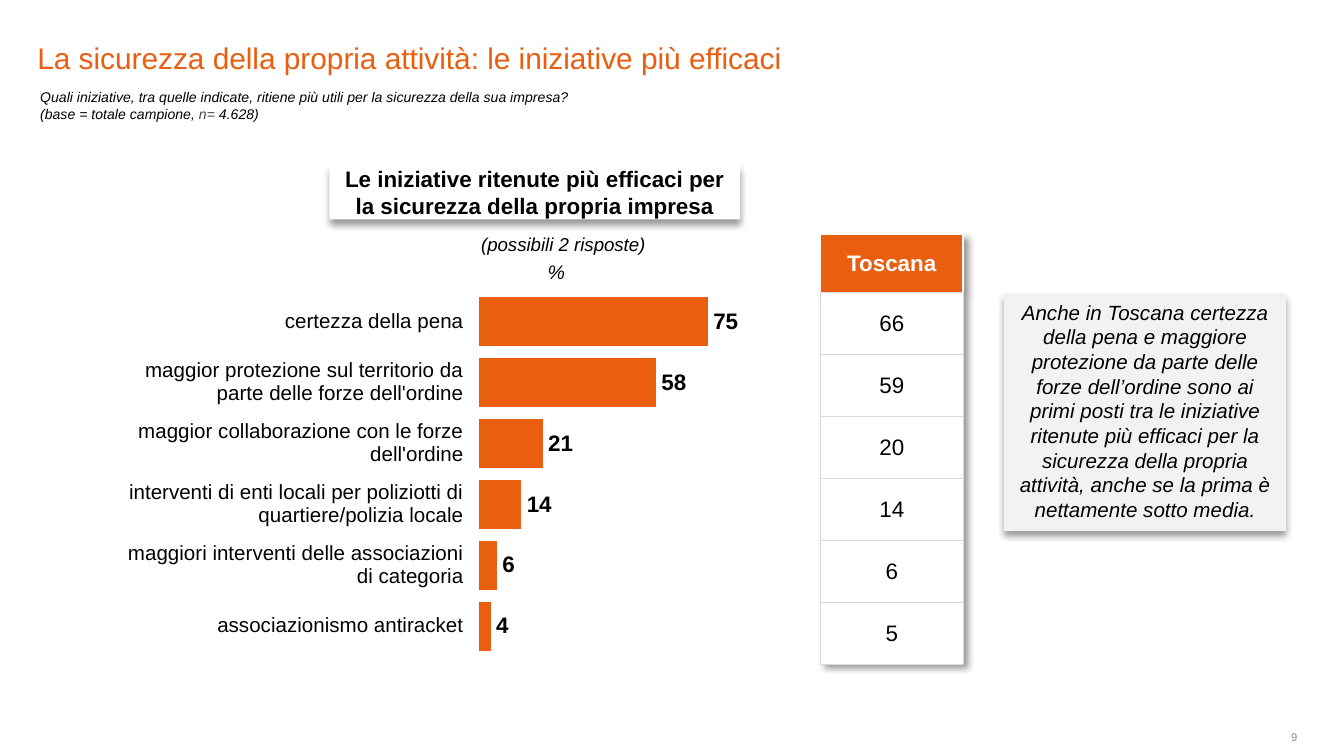
from lxml import etree
from pptx import Presentation
from pptx.chart.data import CategoryChartData
from pptx.dml.color import RGBColor
from pptx.enum.chart import XL_CHART_TYPE, XL_LABEL_POSITION
from pptx.enum.shapes import MSO_SHAPE
from pptx.enum.text import MSO_ANCHOR, MSO_AUTO_SIZE, PP_ALIGN
from pptx.oxml import parse_xml
from pptx.oxml.ns import nsdecls, qn
from pptx.util import Pt

HUES = {"orange": "E95E0F", "black": "000000", "white": "FFFFFF", "grey": "F2F2F2",
        "rule": "D9D9D9", "brown": "4A423F", "number": "928580"}
FONT = "Arial"
NO_STYLE = "{2D5ABB26-0587-4C30-8999-92F81FD0307C}"

TITLE = "La sicurezza della propria attività: le iniziative più efficaci"
QUERY = "Quali iniziative, tra quelle indicate, ritiene più utili per la sicurezza della sua impresa?"
BASE = [("(base = totale campione, ", "black"), ("n=", "brown"), (" 4.628)", "black")]
HEAD = "Le iniziative ritenute più efficaci per la sicurezza della propria impresa"
NOTE = ("Anche in Toscana certezza della pena e maggiore protezione da parte delle forze "
        "dell’ordine sono ai primi posti tra le iniziative ritenute più efficaci per la "
        "sicurezza della propria attività, anche se la prima è nettamente sotto media.")
REGION = "Toscana"
ROWS = [
    ("certezza della pena", 75, 66),
    ("maggior protezione sul territorio da parte delle forze dell'ordine", 58, 59),
    ("maggior collaborazione con le forze dell'ordine", 21, 20),
    ("interventi di enti locali per poliziotti di quartiere/polizia locale", 14, 14),
    ("maggiori interventi delle associazioni di categoria", 6, 6),
    ("associazionismo antiracket", 4, 5),
]
PLOT = {"x": 0.201, "y": 0.01, "w": 0.496, "h": 0.967}


def color(name):
    return RGBColor.from_string(HUES[name])


def style(font, size, hue="black", bold=False, italic=False):
    font.name, font.size = FONT, Pt(size)
    font.bold, font.italic = bold, italic
    font.color.rgb = color(hue)


def write(frame, text, size, hue="black", align=PP_ALIGN.CENTER, bold=False, italic=False):
    frame.text = text
    frame.word_wrap = True
    for para in frame.paragraphs:
        para.alignment = align
        for run in para.runs:
            style(run.font, size, hue, bold, italic)


def inset(item, left, top, right, low):
    item.margin_left, item.margin_top = Pt(left), Pt(top)
    item.margin_right, item.margin_bottom = Pt(right), Pt(low)


def label(box, text, size, anchor=MSO_ANCHOR.TOP, pad=True, **look):
    frame = slide.shapes.add_textbox(*map(Pt, box)).text_frame
    frame.vertical_anchor = anchor
    if not pad:
        inset(frame, 0, 0, 0, 0)
    write(frame, text, size, **look)
    return frame


def shade(angle):
    return parse_xml(
        f'<a:effectLst {nsdecls("a")}><a:outerShdw blurRad="{Pt(4)}" dist="{Pt(3)}" '
        f'dir="{angle * 60000}" algn="t" rotWithShape="0"><a:srgbClr val="{HUES["black"]}">'
        '<a:alpha val="40000"/></a:srgbClr></a:outerShdw></a:effectLst>')


def panel(box, text, size, fill, anchor, **look):
    shape = slide.shapes.add_shape(MSO_SHAPE.RECTANGLE, *map(Pt, box))
    shape.fill.solid()
    shape.fill.fore_color.rgb = color(fill)
    shape.line.fill.background()
    shape._element.spPr.append(shade(90))
    shape.text_frame.vertical_anchor = anchor
    write(shape.text_frame, text, size, **look)


def grid(left, top, width, highs):
    frame = slide.shapes.add_table(len(highs), 1, Pt(left), Pt(top), Pt(width), Pt(sum(highs)))
    table = frame.table
    table.first_row = table.horz_banding = False
    table._tbl.tblPr.find(qn("a:tableStyleId")).text = NO_STYLE
    for row, high in zip(table.rows, highs):
        row.height = Pt(high)
        cell = row.cells[0]
        cell.vertical_anchor = MSO_ANCHOR.MIDDLE
        inset(cell, 0.7, 0.7, 0.7, 0)
    return table


def border(cell, hues, widths):
    props = cell._tc.get_or_add_tcPr()
    for side, hue, width in zip("LRTB", hues, widths):
        line = etree.SubElement(props, qn("a:ln" + side), w=str(Pt(width)))
        fill = etree.SubElement(line, qn("a:solidFill"))
        etree.SubElement(fill, qn("a:srgbClr"), val=HUES[hue])


deck = Presentation()
deck.slide_width, deck.slide_height = Pt(720), Pt(405)
slide = deck.slides.add_slide(deck.slide_layouts[5])

title = slide.shapes.title
title.left, title.top, title.width, title.height = map(Pt, (20, 13.5, 590, 27))
frame = title.text_frame
frame.auto_size = MSO_AUTO_SIZE.NONE
frame.vertical_anchor = MSO_ANCHOR.BOTTOM
inset(frame, 0, 0, 0, 0)
write(frame, TITLE, 16, "orange", PP_ALIGN.LEFT)

data = CategoryChartData(number_format="0")
data.categories = [str(i + 1) for i in range(len(ROWS))]
data.add_series("Series 1", [row[1] for row in ROWS])
chart = slide.shapes.add_chart(XL_CHART_TYPE.BAR_CLUSTERED, Pt(190), Pt(154),
                               Pt(330.5), Pt(202.5), data).chart
chart.has_legend = chart.has_title = False
style(chart.font, 13.5)
chart.category_axis.reverse_order = True
chart.category_axis.visible = False
axis = chart.value_axis
axis.minimum_scale, axis.maximum_scale, axis.major_unit = 0, 100, 10
axis.has_major_gridlines = axis.visible = False
bars = chart.plots[0]
bars.gap_width = 24
bars.vary_by_categories = False
fill = bars.series[0].format.fill
fill.solid()
fill.fore_color.rgb = color("orange")
bars.has_data_labels = True
marks = bars.data_labels
marks.show_value = True
marks.number_format, marks.number_format_is_linked = "0", False
marks.position = XL_LABEL_POSITION.OUTSIDE_END
style(marks.font, 12, bold=True)
area = chart._chartSpace.chart.plotArea
for old in area.findall(qn("c:layout")):
    area.remove(old)
modes = '<c:layoutTarget val="inner"/><c:xMode val="edge"/><c:yMode val="edge"/>'
sizes = "".join(f'<c:{key} val="{val}"/>' for key, val in PLOT.items())
area.insert(0, parse_xml(f'<c:layout {nsdecls("c")}><c:manualLayout>{modes}{sizes}'
                         '</c:manualLayout></c:layout>'))

names = grid(59, 155.5, 190, [32.6] * (len(ROWS) + 1))
for i, row in enumerate(ROWS):
    write(names.cell(i, 0).text_frame, row[0], 11, align=PP_ALIGN.RIGHT)

panel((176.5, 88, 220, 29.5), HEAD, 12, "white", MSO_ANCHOR.MIDDLE, bold=True)
label((287.5, 139, 21, 13), "%", 10.5, MSO_ANCHOR.MIDDLE, pad=False, italic=True)
frame = label((14.4, 44, 502, 25), QUERY, 7.5, align=PP_ALIGN.LEFT, italic=True)
para = frame.add_paragraph()
for text, hue in BASE:
    run = para.add_run()
    run.text = text
    style(run.font, 7.5, hue, italic=True)
label((201, 121, 201.5, 19.5), "(possibili 2 risposte)", 10, italic=True)

table = grid(439.5, 125.5, 76.5, [31] + [33.2] * len(ROWS))
table._tbl.tblPr.insert(0, shade(45))
for i, text in enumerate([REGION] + [str(row[2]) for row in ROWS]):
    cell, top = table.cell(i, 0), i == 0
    write(cell.text_frame, text, 12, "white" if top else "black", bold=top)
    if top:
        border(cell, ["white"] * 3 + ["rule"], [1, 1, 1, 0.25])
    else:
        border(cell, ["rule"] * 4, [0.25] * 4)
    cell.fill.solid()
    cell.fill.fore_color.rgb = color("orange" if top else "white")

panel((538, 157, 151, 127.5), NOTE, 11, "grey", MSO_ANCHOR.TOP, italic=True)
label((598.5, 391.5, 96.5, 6.5), "9", 6, MSO_ANCHOR.MIDDLE, pad=False,
      hue="number", align=PP_ALIGN.RIGHT)

deck.save("out.pptx")
